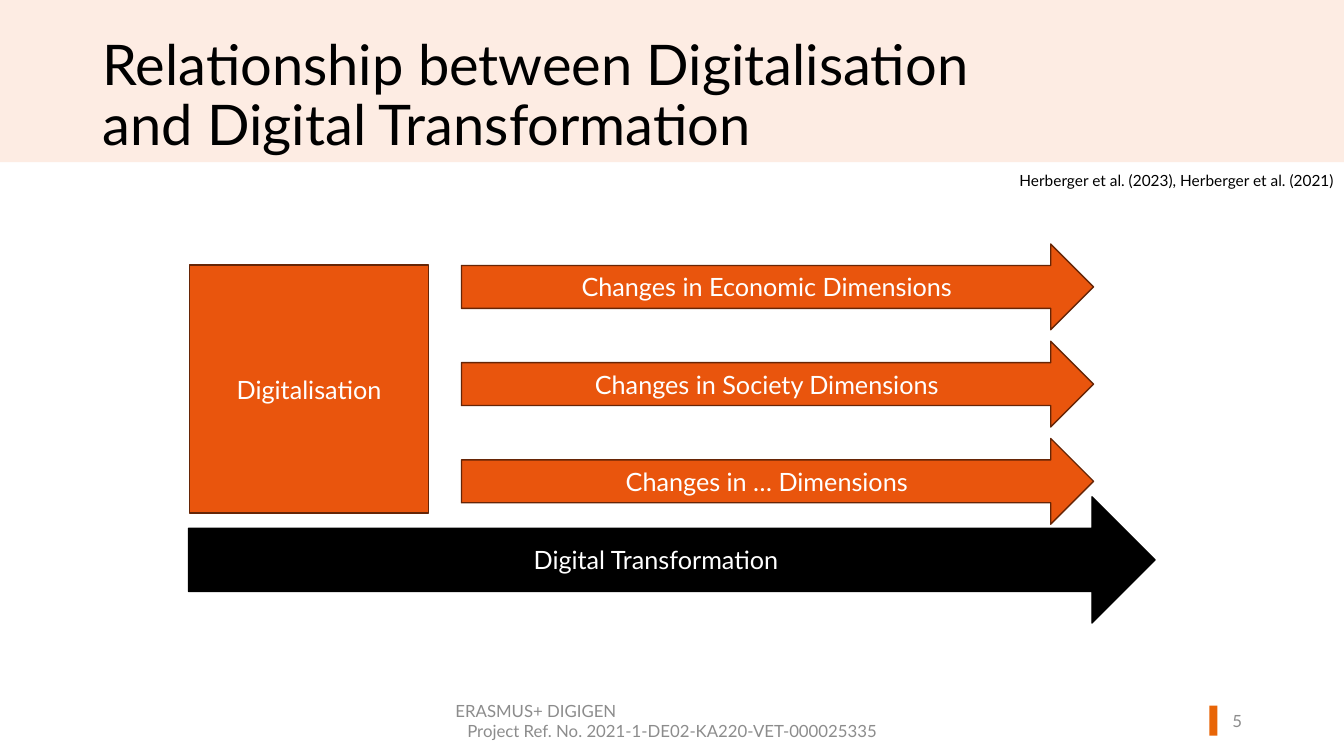
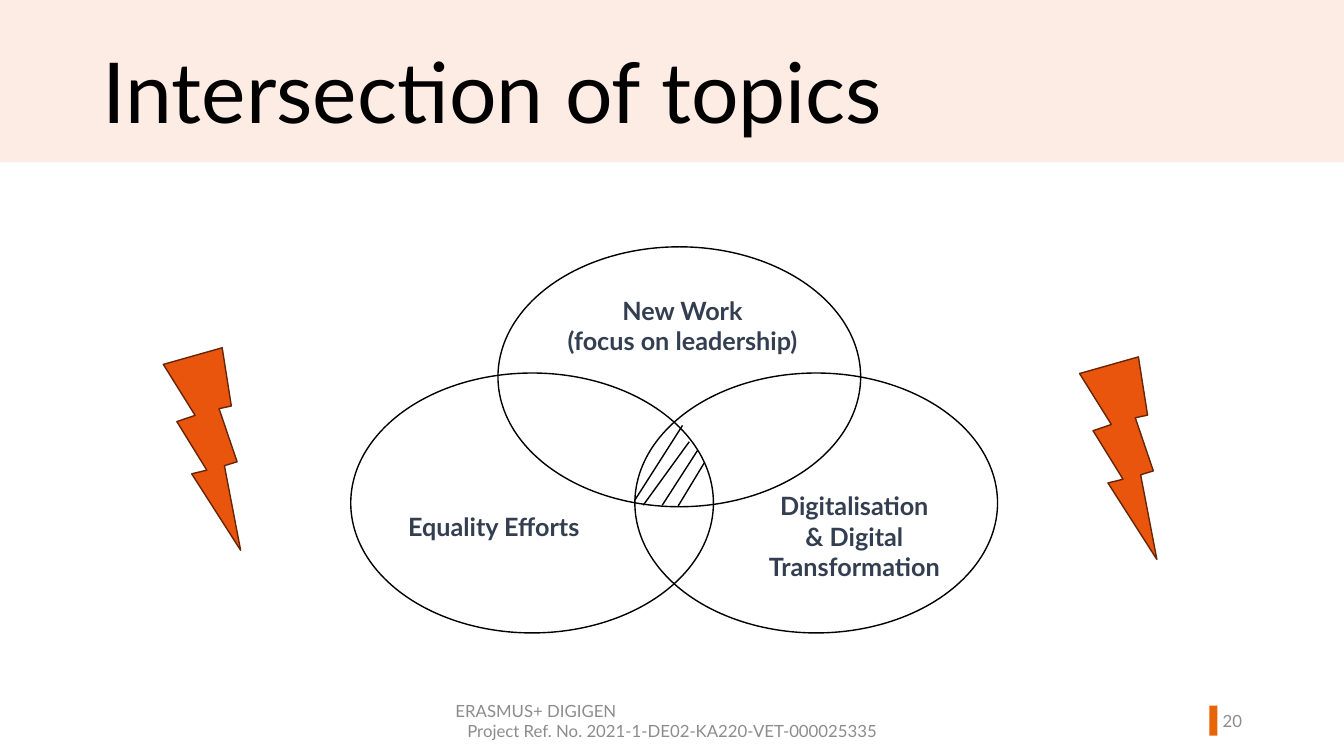
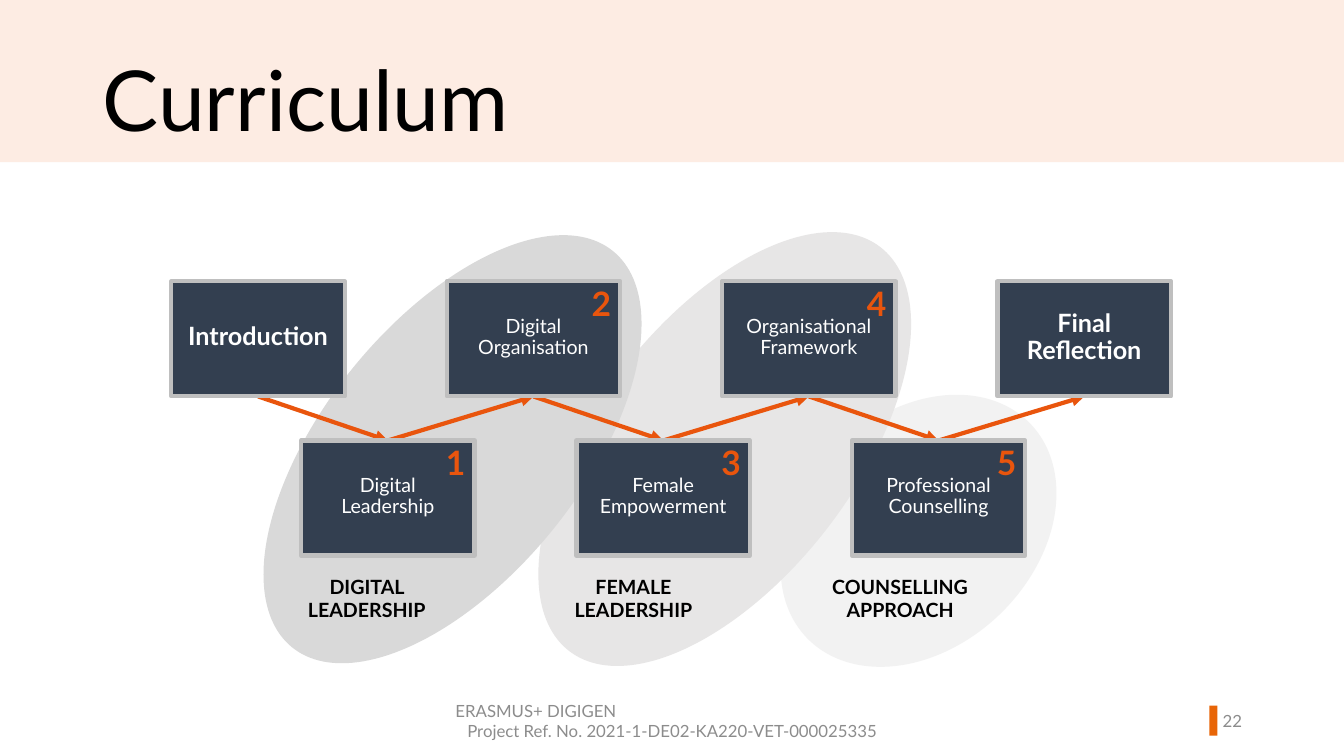
from dataclasses import dataclass
from itertools import pairwise
from typing import Optional

from pptx import Presentation
from pptx.dml.color import RGBColor
from pptx.enum.shapes import MSO_CONNECTOR, MSO_SHAPE
from pptx.enum.text import MSO_ANCHOR, PP_ALIGN
from pptx.oxml.ns import qn
from pptx.oxml.xmlchemy import OxmlElement
from pptx.util import Cm, Pt

RECT, ELLIPSE = MSO_SHAPE.RECTANGLE, MSO_SHAPE.OVAL
ARROW, BOLT = MSO_SHAPE.RIGHT_ARROW, MSO_SHAPE.LIGHTNING_BOLT
STRAIGHT = MSO_CONNECTOR.STRAIGHT
LEFT, CENTER, RIGHT = PP_ALIGN.LEFT, PP_ALIGN.CENTER, PP_ALIGN.RIGHT
TOP, MIDDLE = MSO_ANCHOR.TOP, MSO_ANCHOR.MIDDLE
TOP_SIDE, BOTTOM_SIDE = 0, 2

FONT = "Lato"
COLOURS = {
    "band": "FDECE3", "marker": "E86507", "footer": "8C8C8C",
    "orange": "E9550D", "brown": "662506", "navy": "333F50",
    "frame": "BFBFBF", "black": "000000", "white": "FFFFFF",
    "grey dark": "D9D9D9", "grey mid": "E7E6E6", "grey light": "F2F2F2",
}
WIDTH, HEIGHT = 33.87, 19.05


@dataclass
class Area:
    """Place and size in centimetres."""
    x: float
    y: float
    w: float
    h: float

    def lengths(self) -> tuple:
        return Cm(self.x), Cm(self.y), Cm(self.w), Cm(self.h)


@dataclass
class Style:
    size: float
    colour: str = "black"
    bold: bool = False
    align: Optional[PP_ALIGN] = CENTER
    spacing: Optional[float] = None


@dataclass
class Module:
    text: str
    number: str = ""


@dataclass
class Cluster:
    caption: str
    area: Area
    rotation: float
    fill: str


WHITE_LABEL = Style(18, "white")
TOPIC = Style(18, "navy", bold=True)
FOOTER = Style(12, "footer")


def rgb(name: str) -> RGBColor:
    return RGBColor.from_string(COLOURS[name])


def write(frame, text: str, style: Style, anchor=TOP) -> None:
    """Newline starts a paragraph, vertical tab breaks a line."""
    frame.word_wrap = True
    frame.vertical_anchor = anchor
    for i, content in enumerate(text.split("\n")):
        paragraph = frame.paragraphs[0] if i == 0 else frame.add_paragraph()
        paragraph.alignment = style.align
        paragraph.line_spacing = style.spacing
        for j, line in enumerate(content.split("\v")):
            if j:
                paragraph.add_line_break()
            run = paragraph.add_run()
            run.text = line
            run.font.name = FONT
            run.font.size = Pt(style.size)
            run.font.bold = style.bold
            run.font.color.rgb = rgb(style.colour)


def add_text(slide, area: Area, text: str, style: Style, anchor=TOP):
    box = slide.shapes.add_textbox(*area.lengths())
    write(box.text_frame, text, style, anchor)
    return box


def add_figure(slide, kind, area: Area, fill: str = "", line: str = "",
               weight: float = 1, rotation: float = 0):
    figure = slide.shapes.add_shape(kind, *area.lengths())
    figure.shadow.inherit = False
    figure.rotation = rotation
    if fill:
        figure.fill.solid()
        figure.fill.fore_color.rgb = rgb(fill)
    else:
        figure.fill.background()
    if line:
        figure.line.color.rgb = rgb(line)
        figure.line.width = Pt(weight)
    else:
        figure.line.fill.background()
    return figure


def add_line(slide, x1: float, y1: float, x2: float, y2: float,
             colour: str, weight: float, arrow: bool = False):
    line = slide.shapes.add_connector(STRAIGHT, Cm(x1), Cm(y1), Cm(x2), Cm(y2))
    line.line.color.rgb = rgb(colour)
    line.line.width = Pt(weight)
    properties = line._element.spPr
    if arrow:
        head = OxmlElement("a:tailEnd")
        head.set("type", "triangle")
        properties.find(qn("a:ln")).append(head)
    properties.append(OxmlElement("a:effectLst"))
    return line


def add_page(prs, title: str, title_top: float, title_size: float, number: int):
    """Blank slide with the title band, title, footer and page number."""
    slide = prs.slides.add_slide(prs.slide_layouts[6])
    add_figure(slide, RECT, Area(0, 0, WIDTH, 4.09), "band")
    add_figure(slide, RECT, Area(30.48, 17.78, 0.2, 0.76), "marker")
    add_text(slide, Area(29.9, 17.65, 1.65, 1.02), str(number),
             Style(12, "footer", align=RIGHT), MIDDLE)
    add_text(slide, Area(2.34, title_top, 25.22, 2.16), title,
             Style(title_size, align=LEFT, spacing=0.9))
    footer = add_text(slide, Area(11.23, 17.65, 11.43, 1.02),
                      "ERASMUS+ DIGIGEN\nProject Ref. No. 2021-1-DE02-KA220-VET-000025335",
                      FOOTER, MIDDLE)
    footer.text_frame.paragraphs[0].alignment = LEFT
    return slide


def build_relationship(prs) -> None:
    slide = add_page(prs, "Relationship between Digitalisation\vand Digital Transformation",
                     0.81, 40, 5)
    add_text(slide, Area(25.08, 4.19, 8.79, 0.74),
             "Herberger et al. (2023), Herberger et al. (2021)",
             Style(11, align=RIGHT))
    source = add_figure(slide, RECT, Area(4.78, 6.68, 6.02, 6.25), "orange", "brown")
    write(source.text_frame, "Digitalisation", WHITE_LABEL, MIDDLE)
    outcome = add_figure(slide, ARROW, Area(4.75, 12.52, 24.36, 3.18), "black", "black")
    write(outcome.text_frame, "Digital Transformation", WHITE_LABEL, MIDDLE)
    for i, dimension in enumerate(("Economic", "Society", "…")):
        change = add_figure(slide, ARROW, Area(11.63, 6.15 + 2.45 * i, 15.93, 2.16),
                            "orange", "brown")
        write(change.text_frame, f"Changes in {dimension} Dimensions", WHITE_LABEL, MIDDLE)


def build_intersection(prs) -> None:
    slide = add_page(prs, "Intersection of topics", 1.17, 60, 20)
    # Topic labels
    for area, topic in (
        (Area(13.67, 7.32, 7.06, 1.8), "New Work\n(focus on leadership)"),
        (Area(18.47, 12.24, 6.12, 2.57), "Digitalisation\n& Digital Transformation"),
        (Area(9.88, 12.75, 5.13, 1.02), "Equality Efforts"),
    ):
        add_text(slide, area, topic, TOPIC)
    # Overlapping sets and the hatched centre
    for x, y in ((8.84, 9.4), (16, 9.4), (12.55, 6.22)):
        add_figure(slide, ELLIPSE, Area(x, y, 9.14, 6.55), line="black")
    for hatch in ((16, 12.6, 17.2, 10.72), (16.21, 12.73, 17.37, 11.13),
                  (16.69, 12.73, 17.58, 11.35), (17.09, 12.75, 17.75, 11.66)):
        add_line(slide, *hatch, "black", 1)
    # Tension on both sides
    for x, y in ((3.58, 8.76), (26.67, 8.99)):
        add_figure(slide, BOLT, Area(x, y, 3.28, 4.72), "orange", "brown", rotation=17.7)


CLUSTERS = (
    Cluster("COUNSELLING\nAPPROACH", Area(19.25, 10.44, 7.8, 5.87), 316.4, "grey light"),
    Cluster("FEMALE LEADERSHIP", Area(11.84, 8.05, 12.85, 6.53), 307.6, "grey mid"),
    Cluster("DIGITAL LEADERSHIP", Area(4.98, 8.08, 12.85, 6.48), 309, "grey dark"),
)
MODULES = (
    Module("Introduction"),
    Module("Digital Leadership", "1"),
    Module("Digital Organisation", "2"),
    Module("Female Empowerment", "3"),
    Module("Organisational Framework", "4"),
    Module("Professional Counselling", "5"),
    Module("Final Reflection"),
)
ROW_STARTS = ((4.32, 7.09), (7.59, 11.1))  # upper and lower row
MODULE_PITCH, CAPTION_PITCH = 6.94, 6.72
MODULE_W, MODULE_H = 4.37, 2.9


def add_module(slide, module: Module, x: float, y: float):
    box = add_figure(slide, RECT, Area(x, y, MODULE_W, MODULE_H), "navy", "frame", 3)
    frame = box.text_frame
    frame.margin_left = frame.margin_right = Cm(0.38)
    frame.margin_top, frame.margin_bottom = Cm(0.4), Cm(0.46)
    if module.number:
        style = Style(14, "white", spacing=0.9)
        add_text(slide, Area(x + 3.4, y - 0.08, 0.94, 1.27), module.number,
                 Style(24, "orange", bold=True, align=LEFT))
    else:
        style = Style(18, "white", bold=True, spacing=0.9)
    write(frame, module.text, style, MIDDLE)
    return box


def build_curriculum(prs) -> None:
    slide = add_page(prs, "Curriculum", 1.37, 60, 22)
    for cluster in CLUSTERS:
        add_figure(slide, ELLIPSE, cluster.area, cluster.fill, rotation=cluster.rotation)
    # Modules zigzag between the two rows
    boxes = []
    for i, module in enumerate(MODULES):
        column, row = divmod(i, 2)
        x, y = ROW_STARTS[row]
        boxes.append(add_module(slide, module, x + MODULE_PITCH * column, y))
    # Arrows run from module to module, behind the boxes
    for i, (start, end) in enumerate(pairwise(boxes)):
        sides = (TOP_SIDE, BOTTOM_SIDE) if i % 2 else (BOTTOM_SIDE, TOP_SIDE)
        step = add_line(slide, 0, 0, 1, 1, "orange", 3, arrow=True)
        step.begin_connect(start, sides[0])
        step.end_connect(end, sides[1])
        boxes[0]._element.addprevious(step._element)
    for i, cluster in enumerate(reversed(CLUSTERS)):
        add_text(slide, Area(7.06 + CAPTION_PITCH * i, 14.35, MODULE_W, 1.45),
                 cluster.caption, Style(14, bold=True))


def main() -> None:
    prs = Presentation()
    prs.slide_width, prs.slide_height = Cm(WIDTH), Cm(HEIGHT)
    build_relationship(prs)
    build_intersection(prs)
    build_curriculum(prs)
    prs.save("out.pptx")


if __name__ == "__main__":
    main()
